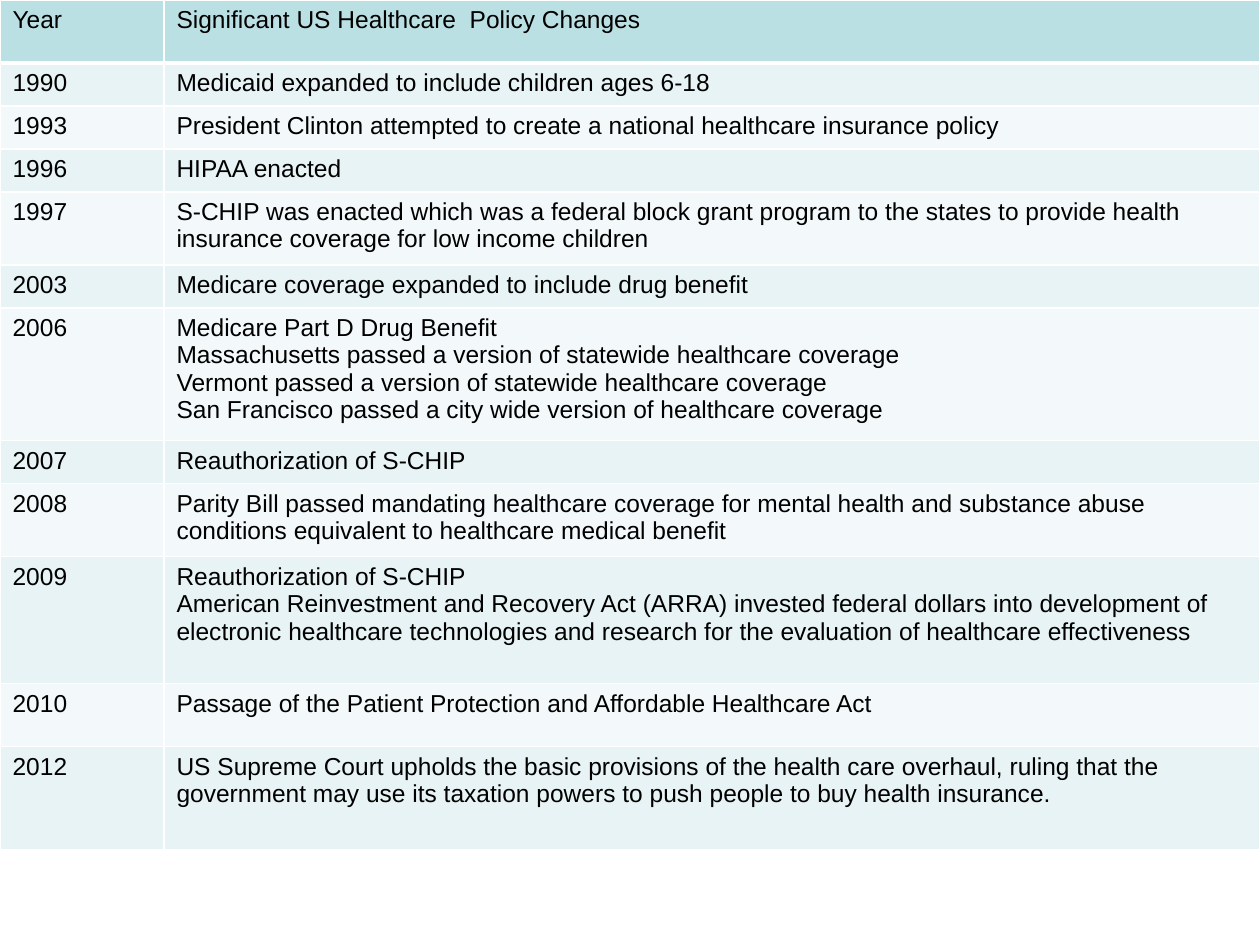
from lxml import etree
from pptx import Presentation
from pptx import util as u
from pptx.dml.color import RGBColor
from pptx.oxml import ns

PX = u.Inches(1) // 126
COLORS = {
    "text": "000000",
    "border": "FFFFFF",
    "header": "BBE0E3",
    "odd": "E7F3F4",
    "even": "F3F9FA",
}
FONT = "Arial"
FONT_SIZE = 14
COLUMN_WIDTHS = [164, 1096]
POLICY_ROWS = [
    (63, "Year", "Significant US Healthcare  Policy Changes"),
    (43, "1990", "Medicaid expanded to include children ages 6-18"),
    (43, "1993", "President Clinton attempted to create a national healthcare insurance policy"),
    (43, "1996", "HIPAA enacted"),
    (73, "1997", "S-CHIP was enacted which was a federal block grant program to the states "
                 "to provide health insurance coverage for low income children"),
    (43, "2003", "Medicare coverage expanded to include drug benefit"),
    (133, "2006", "Medicare Part D Drug Benefit\n"
                  "Massachusetts passed a version of statewide healthcare coverage\n"
                  "Vermont passed a version of statewide healthcare coverage\n"
                  "San Francisco passed a city wide version of healthcare coverage"),
    (43, "2007", "Reauthorization of S-CHIP"),
    (73, "2008", "Parity Bill passed mandating healthcare coverage for mental health and "
                 "substance abuse conditions equivalent to healthcare medical benefit"),
    (127, "2009", "Reauthorization of S-CHIP\n"
                  "American Reinvestment and Recovery Act (ARRA) invested federal dollars into "
                  "development of electronic healthcare technologies and research for the "
                  "evaluation of healthcare effectiveness"),
    (63, "2010", "Passage of the Patient Protection and Affordable Healthcare Act"),
    (103, "2012", "US Supreme Court upholds the basic provisions of the health care overhaul, "
                  "ruling that the government may use its taxation powers to push people to "
                  "buy health insurance."),
]


def set_borders(cell, bottom_width):
    properties = cell._tc.get_or_add_tcPr()
    for side, width in (("L", 1), ("R", 1), ("T", 1), ("B", bottom_width)):
        line = etree.SubElement(properties, ns.qn(f"a:ln{side}"), w=str(u.Pt(width)))
        fill = etree.SubElement(line, ns.qn("a:solidFill"))
        etree.SubElement(fill, ns.qn("a:srgbClr"), val=COLORS["border"])


def fill_cell(cell, content, color, bottom_width):
    set_borders(cell, bottom_width)
    cell.fill.solid()
    cell.fill.fore_color.rgb = RGBColor.from_string(color)
    cell.text_frame.text = content
    for paragraph in cell.text_frame.paragraphs:
        for run in paragraph.runs:
            run.font.name = FONT
            run.font.size = u.Pt(FONT_SIZE)
            run.font.bold = False
            run.font.color.rgb = RGBColor.from_string(COLORS["text"])


def add_policy_table(slide, left, top, width, height):
    frame = slide.shapes.add_table(
        len(POLICY_ROWS), len(COLUMN_WIDTHS),
        left * PX, top * PX, width * PX, height * PX)
    table = frame.table
    table.first_row = False
    table.horz_banding = False
    for column, column_width in zip(table.columns, COLUMN_WIDTHS):
        column.width = column_width * PX
    for index, (row_height, *contents) in enumerate(POLICY_ROWS):
        row = table.rows[index]
        row.height = row_height * PX
        band = "header" if index == 0 else "odd" if index % 2 else "even"
        for cell, content in zip(row.cells, contents):
            fill_cell(cell, content, COLORS[band], 3 if index == 0 else 1)


def main():
    presentation = Presentation()
    presentation.slide_width = 1260 * PX
    presentation.slide_height = 945 * PX
    slide = presentation.slides.add_slide(presentation.slide_layouts[6])
    table_height = sum(row[0] for row in POLICY_ROWS)
    add_policy_table(slide, 0, 0, sum(COLUMN_WIDTHS), table_height)
    presentation.save("out.pptx")


if __name__ == "__main__":
    main()
